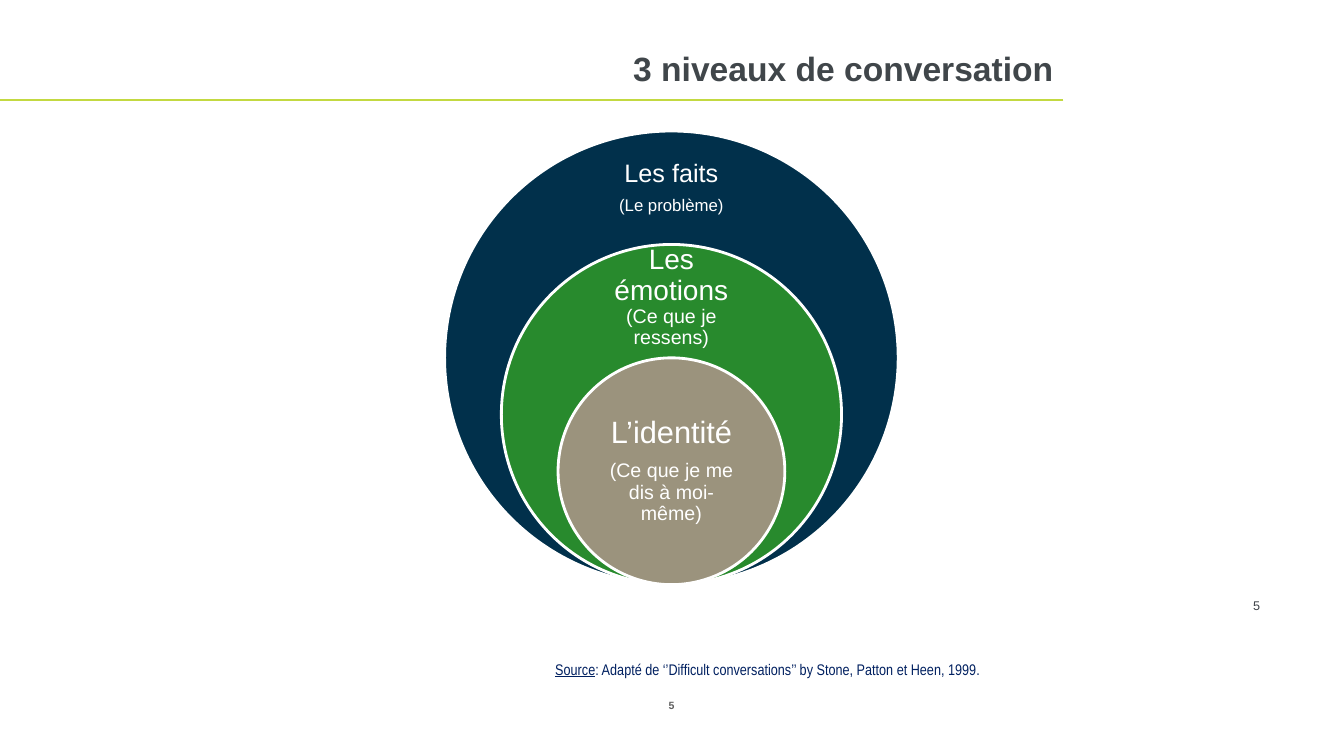
from lxml import etree
from pptx import Presentation
from pptx import util as u
from pptx.dml.color import RGBColor
from pptx.enum import shapes, text
from pptx.oxml.ns import qn

ALIGN = text.PP_ALIGN
ANCHOR = text.MSO_ANCHOR
WHITE = "FFFFFF"


def color(hex_string):
    return RGBColor.from_string(hex_string)


class SlideBuilder:
    font = "Arial"
    line_width = 2

    def __init__(self, slide):
        self.slide = slide

    def add_line(self, start, end, line_color):
        points = [u.Pt(value) for value in (*start, *end)]
        line = self.slide.shapes.add_connector(shapes.MSO_CONNECTOR.STRAIGHT, *points)
        line.line.color.rgb = color(line_color)
        line.line.width = u.Pt(self.line_width)
        etree.SubElement(line._element.spPr, qn("a:effectLst"))

    def add_circle(self, center_x, bottom, diameter, fill):
        box = (center_x - diameter / 2, bottom - diameter, diameter, diameter)
        circle = self.slide.shapes.add_shape(
            shapes.MSO_SHAPE.OVAL, *[u.Pt(value) for value in box])
        circle.shadow.inherit = False
        circle.fill.solid()
        circle.fill.fore_color.rgb = color(fill)
        circle.line.color.rgb = color(WHITE)
        circle.line.width = u.Pt(self.line_width)

    def add_text(self, box, paragraphs, text_color, align=ALIGN.LEFT, anchor=ANCHOR.TOP,
                 inset=None, wrap=True, spacing=None, bold=False, font=None):
        """Each paragraph is a list of runs: (words, size) or (words, size, underline)."""
        shape = self.slide.shapes.add_textbox(*[u.Pt(value) for value in box])
        frame = shape.text_frame
        frame.word_wrap = wrap
        frame.vertical_anchor = anchor
        if inset is not None:
            frame.margin_left = frame.margin_right = u.Pt(inset)
            frame.margin_top = frame.margin_bottom = u.Pt(inset)
        for index, runs in enumerate(paragraphs):
            paragraph = frame.add_paragraph() if index else frame.paragraphs[0]
            paragraph.alignment = align
            if spacing:
                paragraph.line_spacing = spacing
                paragraph.space_after = u.Pt(0.35 * runs[0][1])
            for words, size, *underline in runs:
                run = paragraph.add_run()
                run.text = words
                run.font.name = font or self.font
                run.font.size = u.Pt(size)
                run.font.bold = bold
                run.font.underline = bool(underline)
                run.font.color.rgb = color(text_color)


def main():
    presentation = Presentation()
    presentation.slide_width = u.Pt(960)
    presentation.slide_height = u.Pt(540)
    slide = presentation.slides.add_slide(presentation.slide_layouts[6])
    builder = SlideBuilder(slide)

    builder.add_text((461, 495.5, 37.5, 17), [[("5", 7.5)]], "606060",
                     ALIGN.CENTER, ANCHOR.MIDDLE, bold=True)
    builder.add_line((759.5, 71.5), (0, 71.5), "C3D941")
    builder.add_text((888, 423.5, 62.5, 18), [[("5", 9)]], "3E4248")
    builder.add_text((0, 9.5, 759.5, 78.5), [[("3 niveaux de conversation", 24)]], "40464A",
                     ALIGN.RIGHT, ANCHOR.MIDDLE, bold=True)

    center_x, bottom, largest = 479.6, 417.6, 324
    levels = [
        ("01304B", 109.5, 113, 49, 10, [[("Les faits", 18)], [("(Le problème)", 12)]]),
        ("288A2D", 189.5, 113, 45.5, 11.5,
         [[("Les émotions ", 20), ("(Ce que je ressens)", 14)]]),
        ("9B937D", 296, 114.5, 80.5, 12.25,
         [[("L’identité", 22)], [("(Ce que je me dis à moi-même)", 14)]]),
    ]
    for level, (fill, top, width, height, inset, paragraphs) in enumerate(levels):
        builder.add_circle(center_x, bottom, largest * (1 - level / 4), fill)
        builder.add_text((center_x - width / 2, top, width, height), paragraphs, WHITE,
                         ALIGN.CENTER, ANCHOR.MIDDLE, inset, spacing=0.9)

    builder.add_text(
        (389.5, 468, 320.5, 21),
        [[("Source", 11, True),
          (": Adapté de ‘’Difficult conversations’’ by Stone, Patton et Heen, 1999.", 11)]],
        "002060", wrap=False, font="Arial Narrow")

    presentation.save("out.pptx")


if __name__ == "__main__":
    main()
